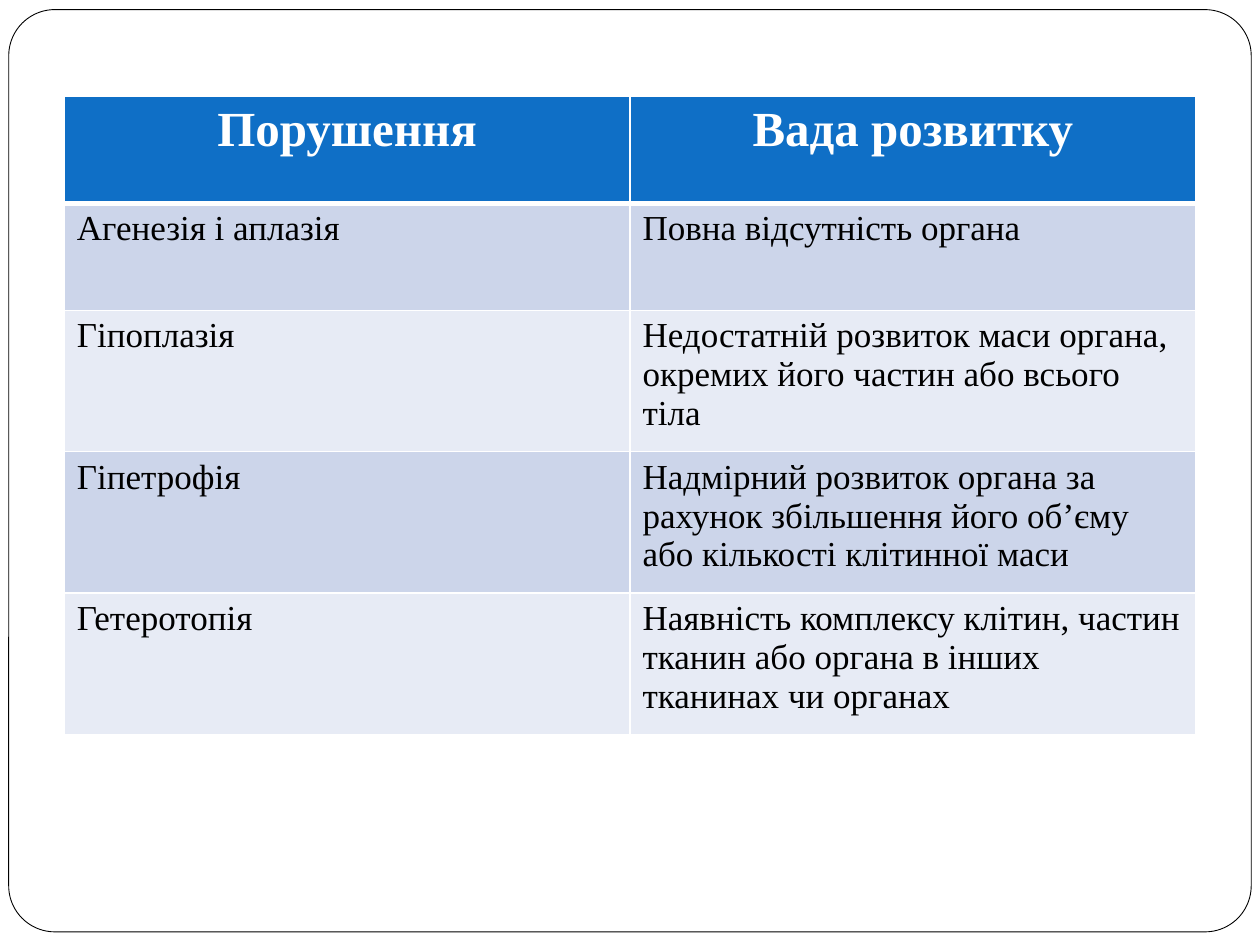
from lxml.etree import SubElement
from pptx import Presentation
from pptx.dml.color import RGBColor
from pptx.enum.shapes import MSO_SHAPE
from pptx.enum.text import PP_ALIGN
from pptx.oxml.ns import qn
from pptx.util import Pt

HEADER = ("Порушення", "Вада розвитку")
DISORDERS = [
    ("Агенезія і аплазія", "Повна відсутність органа"),
    ("Гіпоплазія",
     "Недостатній розвиток маси органа, окремих його частин або всього тіла"),
    ("Гіпетрофія",
     "Надмірний розвиток органа за рахунок збільшення його об’єму "
     "або кількості клітинної маси"),
    ("Гетеротопія",
     "Наявність комплексу клітин, частин тканин або органа "
     "в інших тканинах чи органах"),
]
FONT = "Times New Roman"
WHITE, BLACK, BLUE = "FFFFFF", "000000", "0F6FC6"
BANDS = ("CCD5EA", "E7EBF5")
LEFT, TOP, COL_WIDTH = 36.72, 54.9, 323.28
ROW_HEIGHTS = (61.2, 61.2, 80.8, 80.8, 80.8)


def rgb(value):
    return RGBColor.from_string(value)


def set_borders(cell, **widths):
    """Draw white cell borders; widths in points, keyed by side L, R, T, B."""
    tc_pr = cell._tc.get_or_add_tcPr()
    for side, width in widths.items():
        ln = SubElement(tc_pr, qn(f"a:ln{side}"), w=str(Pt(width)))
        fill = SubElement(ln, qn("a:solidFill"))
        SubElement(fill, qn("a:srgbClr"), val=WHITE)


def fill_cell(cell, text, fill, color, size, is_header):
    set_borders(cell, L=1, R=1, T=1, B=3 if is_header else 1)
    cell.fill.solid()
    cell.fill.fore_color.rgb = rgb(fill)
    p = cell.text_frame.paragraphs[0]
    p.text = text
    p.alignment = PP_ALIGN.CENTER if is_header else PP_ALIGN.LEFT
    font = p.runs[0].font
    font.name, font.size, font.bold = FONT, Pt(size), is_header
    font.color.rgb = rgb(color)


prs = Presentation()
prs.slide_width, prs.slide_height = Pt(720), Pt(540)
s = prs.slides.add_slide(prs.slide_layouts[6])

frame = s.shapes.add_shape(MSO_SHAPE.ROUNDED_RECTANGLE,
                           Pt(5), Pt(5.5), Pt(710), Pt(527))
frame.adjustments[0] = 0.05
frame.shadow.inherit = False
frame.fill.solid()
frame.fill.fore_color.rgb = rgb(WHITE)
frame.line.color.rgb = rgb(BLACK)
frame.line.width = Pt(0.5)

rows = [HEADER, *DISORDERS]
table = s.shapes.add_table(len(rows), len(HEADER), Pt(LEFT), Pt(TOP),
                           Pt(COL_WIDTH * len(HEADER)), Pt(sum(ROW_HEIGHTS))).table
for column in table.columns:
    column.width = Pt(COL_WIDTH)
for i, (texts, height) in enumerate(zip(rows, ROW_HEIGHTS)):
    table.rows[i].height = Pt(height)
    style = (BLUE, WHITE, 28, True) if i == 0 else (BANDS[(i - 1) % 2], BLACK, 20, False)
    for j, text in enumerate(texts):
        fill_cell(table.cell(i, j), text, *style)

prs.save("out.pptx")
